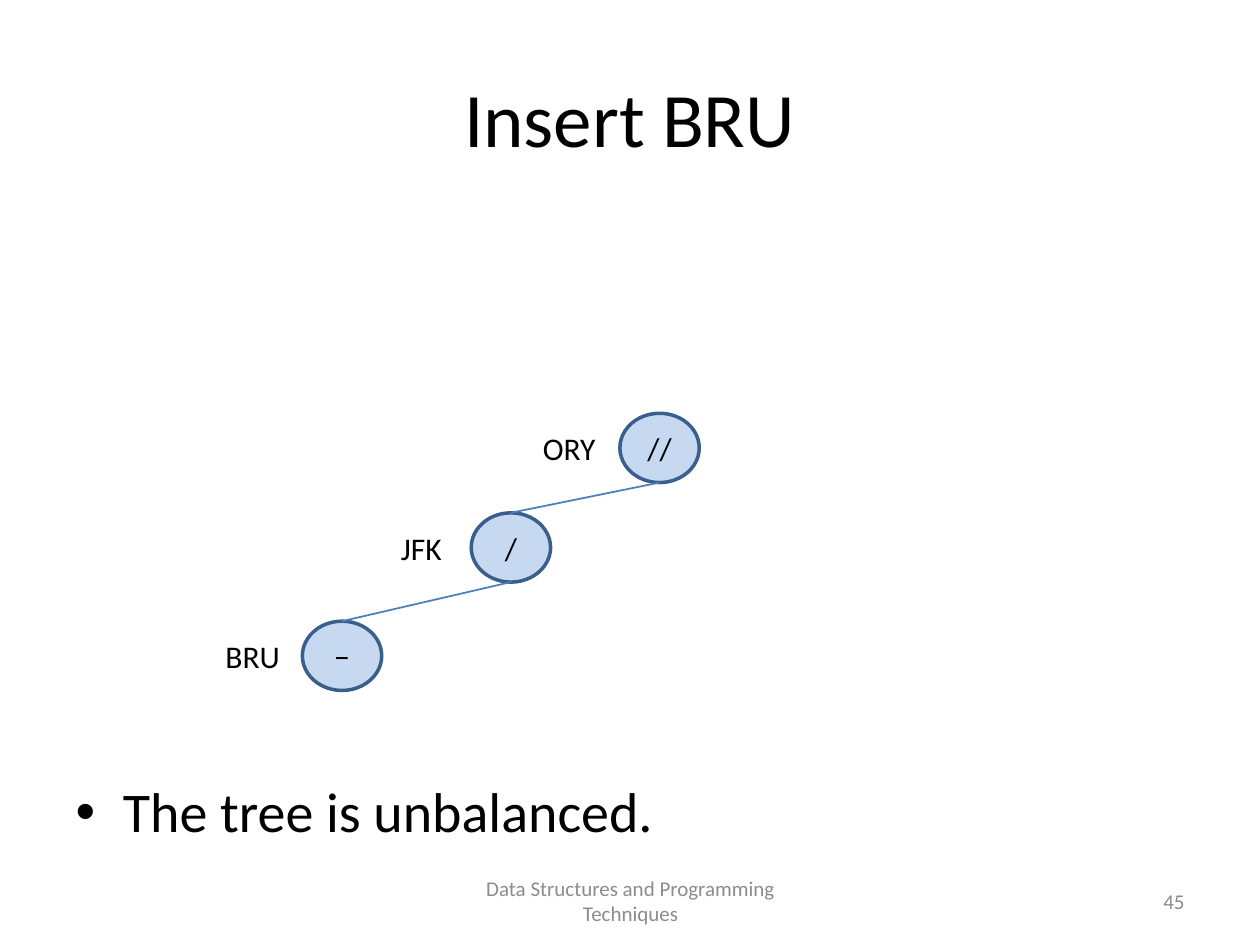
from dataclasses import dataclass

from pptx import Presentation
from pptx import util as u
from pptx.dml.color import RGBColor
from pptx.enum import shapes, text
from pptx.oxml.ns import qn
from lxml import etree


@dataclass(frozen=True)
class Theme:
    font: str = "Calibri"
    ink: str = "000000"
    muted: str = "8C8C8C"
    node_fill: str = "C6D9F1"
    node_line: str = "3A5F8C"
    edge: str = "4B7EBC"
    title_size: int = 44
    body_size: int = 32
    label_size: int = 18
    footer_size: int = 12
    node_weight: int = 2
    edge_weight: int = 1


class SlideBuilder:
    COLUMNS = 100
    ROWS = 75

    def __init__(self, presentation, theme):
        self.theme = theme
        self.column = presentation.slide_width / self.COLUMNS
        self.row = presentation.slide_height / self.ROWS
        self.slide = presentation.slides.add_slide(presentation.slide_layouts[1])

    def box(self, left, top, width, height):
        return (u.Emu(round(left * self.column)), u.Emu(round(top * self.row)),
                u.Emu(round(width * self.column)), u.Emu(round(height * self.row)))

    def set_words(self, shape, words, size, align, anchor, color=None):
        frame = shape.text_frame
        frame.word_wrap = True
        frame.auto_size = text.MSO_AUTO_SIZE.NONE
        frame.vertical_anchor = anchor
        paragraph = frame.paragraphs[0]
        paragraph.alignment = align
        run = paragraph.add_run()
        run.text = words
        run.font.name = self.theme.font
        run.font.size = u.Pt(size)
        run.font.color.rgb = RGBColor.from_string(color or self.theme.ink)

    def place(self, shape, area):
        shape.left, shape.top, shape.width, shape.height = self.box(*area)

    def title(self, words, area):
        shape = self.slide.shapes.title
        self.place(shape, area)
        self.set_words(shape, words, self.theme.title_size,
                       text.PP_ALIGN.CENTER, text.MSO_ANCHOR.MIDDLE)

    def bullet(self, words, area):
        shape = self.slide.placeholders[1]
        self.place(shape, area)
        self.set_words(shape, words, self.theme.body_size,
                       text.PP_ALIGN.LEFT, text.MSO_ANCHOR.BOTTOM)
        shape.text_frame.margin_bottom = 0

    def label(self, words, area, align=text.PP_ALIGN.CENTER):
        shape = self.slide.shapes.add_textbox(*self.box(*area))
        self.set_words(shape, words, self.theme.label_size, align, text.MSO_ANCHOR.TOP)

    def footer(self, words, area, align):
        shape = self.slide.shapes.add_textbox(*self.box(*area))
        self.set_words(shape, words, self.theme.footer_size, align,
                       text.MSO_ANCHOR.MIDDLE, self.theme.muted)

    def node(self, area):
        shape = self.slide.shapes.add_shape(shapes.MSO_SHAPE.OVAL, *self.box(*area))
        shape.shadow.inherit = False
        shape.fill.solid()
        shape.fill.fore_color.rgb = RGBColor.from_string(self.theme.node_fill)
        shape.line.color.rgb = RGBColor.from_string(self.theme.node_line)
        shape.line.width = u.Pt(self.theme.node_weight)

    def edge(self, start, end):
        connector = self.slide.shapes.add_connector(
            shapes.MSO_CONNECTOR.STRAIGHT, *self.box(*start, *end))
        connector.line.color.rgb = RGBColor.from_string(self.theme.edge)
        connector.line.width = u.Pt(self.theme.edge_weight)
        etree.SubElement(connector._element.spPr, qn("a:effectLst"))


def main():
    presentation = Presentation()
    presentation.slide_width = u.Inches(10)
    presentation.slide_height = u.Inches(7.5)
    builder = SlideBuilder(presentation, Theme())
    center, left, right = text.PP_ALIGN.CENTER, text.PP_ALIGN.LEFT, text.PP_ALIGN.RIGHT

    builder.title("Insert BRU", (5, 3, 90, 12.5))
    builder.bullet("The tree is unbalanced.", (5, 17.5, 90, 49.5))

    node_width, node_height = 6.3, 5.5
    label_drop, label_height = 0.8, 4
    tree = [
        ("ORY", "//", 49.2, 32.8, 42.1, 6.3, left),
        ("JFK", "/", 37.4, 40.7, 30.3, 6.3, center),
        ("BRU", "−", 24, 49.3, 16.1, 7.9, center),
    ]
    parent_foot = None
    for airport, balance, x, y, label_x, label_width, align in tree:
        middle = x + node_width / 2
        builder.node((x, y, node_width, node_height))
        builder.label(airport, (label_x, y + label_drop, label_width, label_height), align)
        builder.label(balance, (x, y + label_drop, node_width, label_height))
        if parent_foot:
            builder.edge(parent_foot, (middle, y))
        parent_foot = (middle, y + node_height)

    builder.footer("Data Structures and Programming Techniques",
                   (34.2, 69.5, 31.7, 4), center)
    builder.footer("45", (71.7, 69.5, 23.3, 4), right)
    presentation.save("out.pptx")


if __name__ == "__main__":
    main()
